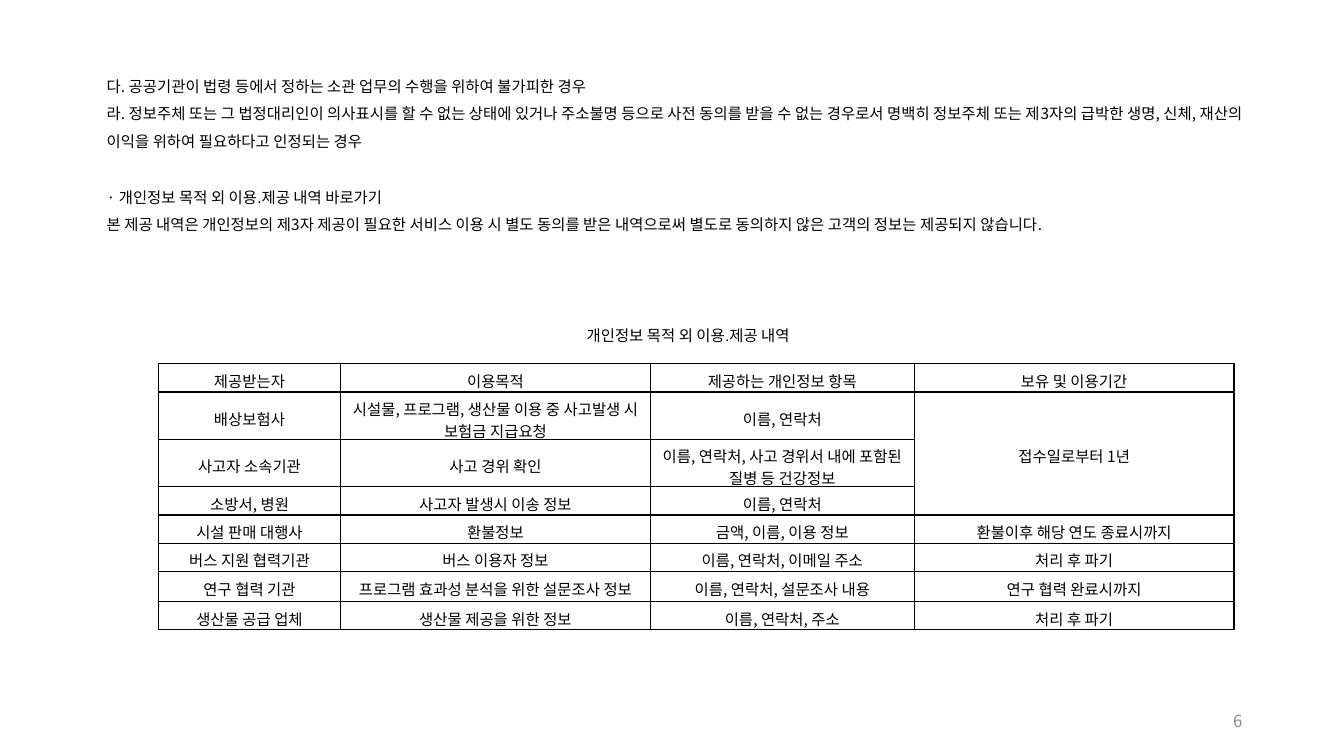
"""Build the slide on personal data provided to third parties."""
from lxml import etree
from pptx import Presentation
from pptx.dml.color import RGBColor
from pptx.enum.text import MSO_ANCHOR, MSO_AUTO_SIZE, PP_ALIGN
from pptx.oxml.ns import qn
from pptx.util import Inches, Pt

BLACK = RGBColor(0x00, 0x00, 0x00)
GRAY = RGBColor(0x8C, 0x8C, 0x8C)
KOREAN_FONT = "Noto Sans CJK KR"
LEFT, CENTER, RIGHT = PP_ALIGN.LEFT, PP_ALIGN.CENTER, PP_ALIGN.RIGHT
MIDDLE = MSO_ANCHOR.MIDDLE
GROW = MSO_AUTO_SIZE.SHAPE_TO_FIT_TEXT


def write(frame, text, size=11, color=BLACK, font=KOREAN_FONT, align=LEFT, spacing=None):
    frame.word_wrap = True
    for index, line in enumerate(text.split("\n")):
        paragraph = frame.paragraphs[0] if index == 0 else frame.add_paragraph()
        paragraph.alignment = align
        paragraph.line_spacing = spacing
        paragraph.font.size = Pt(size)
        if not line:
            continue
        run = paragraph.add_run()
        run.text = line
        run.font.size = Pt(size)
        run.font.name = font
        run.font.color.rgb = color
        east_asian = etree.SubElement(run.font._element, qn("a:ea"))
        east_asian.set("typeface", KOREAN_FONT)


def draw_borders(cell):
    properties = cell._tc.get_or_add_tcPr()
    for position, side in enumerate(("a:lnL", "a:lnR", "a:lnT", "a:lnB")):
        border = etree.Element(qn(side), w=str(Pt(1)))
        fill = etree.SubElement(border, qn("a:solidFill"))
        etree.SubElement(fill, qn("a:srgbClr"), val=str(BLACK))
        properties.insert(position, border)


prs = Presentation()
prs.slide_width, prs.slide_height = Inches(13.33), Inches(7.5)
slide = prs.slides.add_slide(prs.slide_layouts[6])

clauses = slide.shapes.add_textbox(Inches(0.96), Inches(0.62), Inches(11.55), Inches(1.73)).text_frame
clauses.auto_size = GROW
write(clauses, """다. 공공기관이 법령 등에서 정하는 소관 업무의 수행을 위하여 불가피한 경우
라. 정보주체 또는 그 법정대리인이 의사표시를 할 수 없는 상태에 있거나 주소불명 등으로 사전 동의를 받을 수 없는 경우로서 명백히 정보주체 또는 제3자의 급박한 생명, 신체, 재산의 이익을 위하여 필요하다고 인정되는 경우

· 개인정보 목적 외 이용.제공 내역 바로가기
본 제공 내역은 개인정보의 제3자 제공이 필요한 서비스 이용 시 별도 동의를 받은 내역으로써 별도로 동의하지 않은 고객의 정보는 제공되지 않습니다.""", spacing=1.5)

caption = slide.shapes.add_textbox(Inches(1.78), Inches(3.09), Inches(9.59), Inches(0.34)).text_frame
caption.auto_size = GROW
write(caption, "개인정보 목적 외 이용.제공 내역", font="Arial", align=CENTER, spacing=1.5)
caption_format = caption.paragraphs[0]._p.get_or_add_pPr()
caption_format.set("marL", str(Inches(0.5)))
caption_format.set("lvl", "1")

PROVISIONS = [
    ("제공받는자", "이용목적", "제공하는 개인정보 항목", "보유 및 이용기간"),
    ("배상보험사", "시설물, 프로그램, 생산물 이용 중 사고발생 시 보험금 지급요청", "이름, 연락처", "접수일로부터 1년"),
    ("사고자 소속기관", "사고 경위 확인", "이름, 연락처, 사고 경위서 내에 포함된 질병 등 건강정보", ""),
    ("소방서, 병원", "사고자 발생시 이송 정보", "이름, 연락처", ""),
    ("시설 판매 대행사", "환불정보", "금액, 이름, 이용 정보", "환불이후 해당 연도 종료시까지"),
    ("버스 지원 협력기관", "버스 이용자 정보", "이름, 연락처, 이메일 주소", "처리 후 파기"),
    ("연구 협력 기관", "프로그램 효과성 분석을 위한 설문조사 정보", "이름, 연락처, 설문조사 내용", "연구 협력 완료시까지"),
    ("생산물 공급 업체", "생산물 제공을 위한 정보", "이름, 연락처, 주소", "처리 후 파기"),
]
COLUMN_WIDTHS = (1.81, 3.07, 2.62, 3.17)
ROW_HEIGHTS = (0.28, 0.47, 0.47, 0.28, 0.28, 0.28, 0.3, 0.28)

provision_table = slide.shapes.add_table(
    len(ROW_HEIGHTS), len(COLUMN_WIDTHS), Inches(1.57), Inches(3.61),
    Inches(sum(COLUMN_WIDTHS)), Inches(sum(ROW_HEIGHTS))).table
provision_table.first_row = False
provision_table.horz_banding = False
for column, width in zip(provision_table.columns, COLUMN_WIDTHS):
    column.width = Inches(width)
for row, height, provision in zip(provision_table.rows, ROW_HEIGHTS, PROVISIONS):
    row.height = Inches(height)
    for cell, text in zip(row.cells, provision):
        cell.fill.background()
        cell.vertical_anchor = MIDDLE
        cell.margin_top, cell.margin_bottom = Inches(0.05), Inches(0)
        write(cell.text_frame, text, align=CENTER)
        draw_borders(cell)
provision_table.cell(1, 3).merge(provision_table.cell(3, 3))

page_number = slide.shapes.add_textbox(Inches(9.42), Inches(6.95), Inches(3), Inches(0.4)).text_frame
page_number.vertical_anchor = MIDDLE
write(page_number, "6", size=12, color=GRAY, align=RIGHT)

prs.save("out.pptx")
